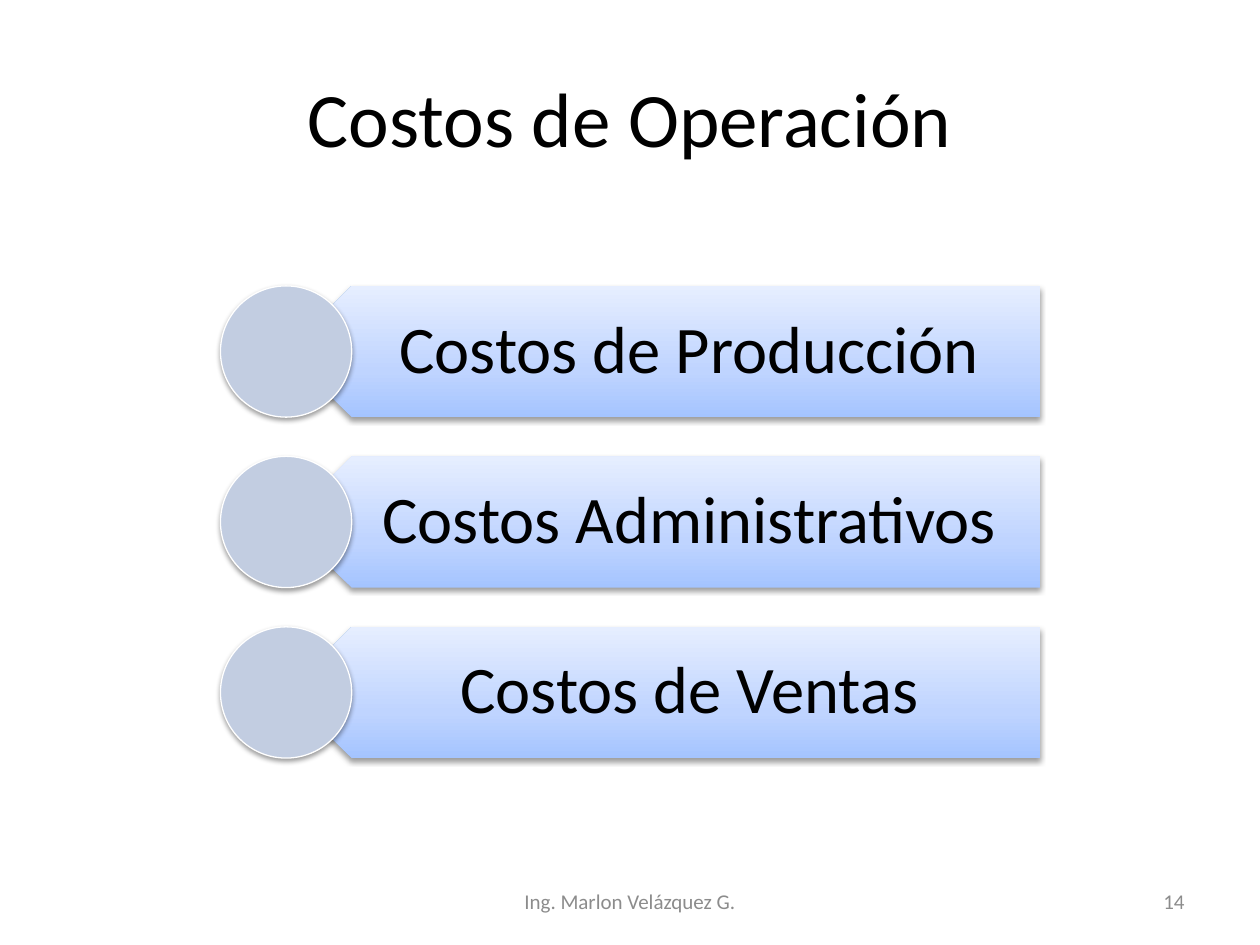
from lxml import etree
from pptx import Presentation
from pptx.dml.color import RGBColor
from pptx.enum.shapes import MSO_SHAPE
from pptx.enum.text import MSO_ANCHOR, PP_ALIGN
from pptx.oxml import parse_xml
from pptx.oxml.ns import nsdecls, qn
from pptx.util import Pt

PENTAGON, CIRCLE = MSO_SHAPE.PENTAGON, MSO_SHAPE.OVAL
MIDDLE = MSO_ANCHOR.MIDDLE
CENTER, RIGHT = PP_ALIGN.CENTER, PP_ALIGN.RIGHT

FONT = "Calibri"
BLACK, GRAY, WHITE, CIRCLE_FILL = "000000", "8C8C8C", "FFFFFF", "C2CDE1"
BAR_GRADIENT = ((0, "A4C4FF"), (35, "BFD4FF"), (100, "E6EEFF"))

COSTS = ("Costos de Producción", "Costos Administrativos", "Costos de Ventas")
FIRST_TOP, ROW_STEP, ROW_HEIGHT = 163.4, 97.4, 75
CIRCLE_LEFT, BAR_LEFT, BAR_WIDTH = 126, 163.5, 431
LABEL_LEFT, LABEL_WIDTH = 182.2, 412.2


def color(hex_value):
    return RGBColor.from_string(hex_value)


def box(left, top, width, height):
    return Pt(left), Pt(top), Pt(width), Pt(height)


def format_text(shape, text, size, hex_value, align):
    frame = shape.text_frame
    frame.text = text
    frame.word_wrap = True
    frame.vertical_anchor = MIDDLE
    paragraph = frame.paragraphs[0]
    paragraph.alignment = align
    font = paragraph.runs[0].font
    font.name, font.size = FONT, Pt(size)
    font.color.rgb = color(hex_value)
    return frame


def add_text(shapes, bounds, text, size, hex_value, align):
    return format_text(shapes.add_textbox(*bounds), text, size, hex_value, align)


def add_soft_shadow(shape):
    shape.shadow.inherit = False
    effects = shape._element.spPr.find(qn("a:effectLst"))
    shadow = etree.SubElement(
        effects, qn("a:outerShdw"), blurRad=str(Pt(3.1)), dist=str(Pt(1.6)),
        dir="5400000", rotWithShape="0")
    black = etree.SubElement(shadow, qn("a:srgbClr"), val=BLACK)
    etree.SubElement(black, qn("a:alpha"), val="38000")


def fill_gradient(shape, stops):
    """Fill from bottom to top, whatever the rotation of the shape."""
    stop_xml = "".join(
        f'<a:gs pos="{position * 1000}"><a:srgbClr val="{hex_value}"/></a:gs>'
        for position, hex_value in stops)
    gradient = parse_xml(
        f'<a:gradFill {nsdecls("a")} rotWithShape="0"><a:gsLst>{stop_xml}</a:gsLst>'
        '<a:lin ang="16200000" scaled="0"/></a:gradFill>')
    shape.fill.gradient()
    properties = shape._element.spPr
    properties.replace(properties.find(qn("a:gradFill")), gradient)


def add_bar(shapes, top):
    bar = shapes.add_shape(PENTAGON, *box(BAR_LEFT, top, BAR_WIDTH, ROW_HEIGHT))
    bar.rotation = 180
    fill_gradient(bar, BAR_GRADIENT)
    bar.line.fill.background()
    add_soft_shadow(bar)


def add_circle(shapes, top):
    circle = shapes.add_shape(CIRCLE, *box(CIRCLE_LEFT, top, ROW_HEIGHT, ROW_HEIGHT))
    circle.fill.solid()
    circle.fill.fore_color.rgb = color(CIRCLE_FILL)
    circle.line.color.rgb = color(WHITE)
    circle.line.width = Pt(0.75)
    add_soft_shadow(circle)


def add_cost_row(shapes, top, label):
    add_bar(shapes, top)
    frame = add_text(shapes, box(LABEL_LEFT, top, LABEL_WIDTH, ROW_HEIGHT),
                     label, 38, BLACK, CENTER)
    frame.margin_left, frame.margin_right = Pt(33), Pt(21.6)
    frame.margin_top = frame.margin_bottom = Pt(11.5)
    frame.paragraphs[0].line_spacing = 0.9
    add_circle(shapes, top)


def add_title(slide, text):
    title = slide.shapes.title
    title.left, title.top, title.width, title.height = box(36, 21.6, 648, 90)
    format_text(title, text, 44, BLACK, CENTER)


def main():
    presentation = Presentation()
    presentation.slide_width, presentation.slide_height = Pt(720), Pt(540)
    slide = presentation.slides.add_slide(presentation.slide_layouts[5])
    add_title(slide, "Costos de Operación")

    diagram = slide.shapes.add_group_shape()
    for index, label in enumerate(COSTS):
        add_cost_row(diagram.shapes, FIRST_TOP + index * ROW_STEP, label)

    add_text(slide.shapes, box(246, 500.5, 228, 28.75),
             "Ing. Marlon Velázquez G.", 12, GRAY, CENTER)
    add_text(slide.shapes, box(516, 500.5, 168, 28.75), "14", 12, GRAY, RIGHT)
    presentation.save("out.pptx")


if __name__ == "__main__":
    main()
